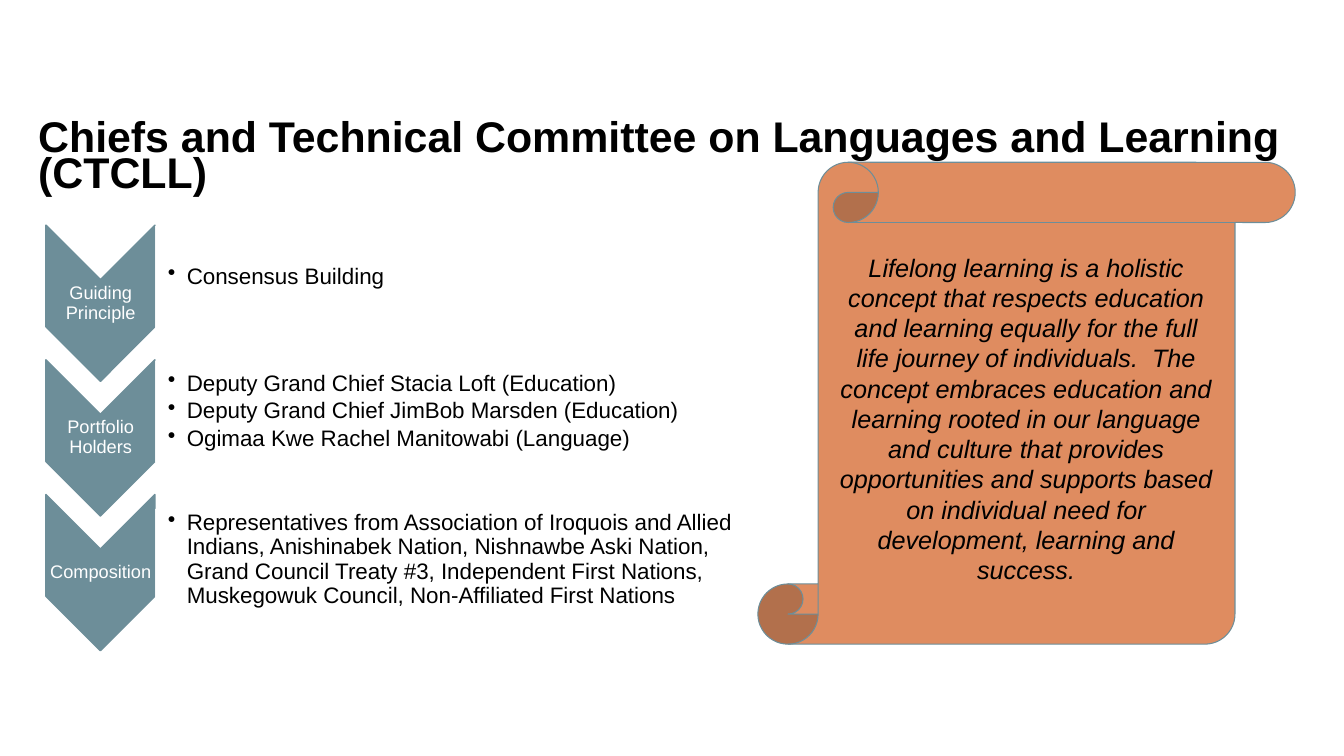
from dataclasses import dataclass

from lxml.etree import SubElement
from pptx import Presentation
from pptx.dml.color import RGBColor
from pptx.enum.shapes import MSO_SHAPE
from pptx.enum.text import MSO_ANCHOR, PP_ALIGN
from pptx.oxml.ns import qn
from pptx.shapes.autoshape import Shape
from pptx.slide import Slide
from pptx.util import Pt

SLATE, ORANGE, WHITE, BLACK = "6D8E99", "DF8C60", "FFFFFF", "000000"
ROW_PITCH = 96.2


@dataclass
class Box:
    left: float
    top: float
    width: float
    height: float

    def turned(self) -> "Box":
        """Return the frame that covers this box once rotated by 90 degrees."""
        shift = (self.width - self.height) / 2
        return Box(self.left + shift, self.top - shift, self.height, self.width)

    def lengths(self) -> tuple[Pt, ...]:
        return tuple(Pt(n) for n in (self.left, self.top, self.width, self.height))


@dataclass
class TextStyle:
    size: float
    color: str = BLACK
    bold: bool = False
    italic: bool = False
    align: PP_ALIGN = PP_ALIGN.LEFT
    anchor: MSO_ANCHOR = MSO_ANCHOR.TOP
    line_spacing: float = 1.0
    space_after: float = 0
    bulleted: bool = False
    insets: tuple[float, float, float, float] = (7.2, 3.6, 7.2, 3.6)


@dataclass
class Row:
    label: str
    items: list[str]
    body_top: float


TITLE = TextStyle(30.6, bold=True, line_spacing=0.7)
LABEL = TextStyle(13, WHITE, align=PP_ALIGN.CENTER, anchor=MSO_ANCHOR.MIDDLE,
                  line_spacing=0.9, insets=(0.65, 0.65, 0.65, 0.65))
BODY = TextStyle(16, anchor=MSO_ANCHOR.MIDDLE, line_spacing=0.9, space_after=2.4,
                 bulleted=True, insets=(9, 0.8, 0.8, 0.8))
QUOTE = TextStyle(18, italic=True, align=PP_ALIGN.CENTER)

ROWS = [
    Row("Guiding Principle", ["Consensus Building"], 165),
    Row("Portfolio Holders", [
        "Deputy Grand Chief Stacia Loft (Education)",
        "Deputy Grand Chief JimBob Marsden (Education)",
        "Ogimaa Kwe Rachel Manitowabi (Language)",
    ], 261.2),
    Row("Composition", [
        "Representatives from Association of Iroquois and Allied Indians, "
        "Anishinabek Nation, Nishnawbe Aski Nation, Grand Council Treaty #3, "
        "Independent First Nations, Muskegowuk Council, "
        "Non-Affiliated First Nations",
    ], 367),
]
QUOTE_TEXT = (
    "Lifelong learning is a holistic concept that respects education and "
    "learning equally for the full life journey of individuals.  The concept "
    "embraces education and learning rooted in our language and culture that "
    "provides opportunities and supports based on individual need for "
    "development, learning and success."
)


def rgb(color: str) -> RGBColor:
    return RGBColor.from_string(color)


def add_shape(slide: Slide, kind: MSO_SHAPE, box: Box, fill: str,
              line_width: float = 0) -> Shape:
    shape = slide.shapes.add_shape(kind, *box.lengths())
    shape.shadow.inherit = False
    shape.fill.solid()
    shape.fill.fore_color.rgb = rgb(fill)
    if line_width:
        shape.line.color.rgb = rgb(SLATE)
        shape.line.width = Pt(line_width)
    else:
        shape.line.fill.background()
    return shape


def add_text(slide: Slide, box: Box, texts: list[str], style: TextStyle) -> None:
    frame = slide.shapes.add_textbox(*box.lengths()).text_frame
    frame.word_wrap = True
    frame.vertical_anchor = style.anchor
    (frame.margin_left, frame.margin_top,
     frame.margin_right, frame.margin_bottom) = (Pt(n) for n in style.insets)
    for index, text in enumerate(texts):
        paragraph = frame.add_paragraph() if index else frame.paragraphs[0]
        paragraph.text = text
        paragraph.alignment = style.align
        paragraph.line_spacing = style.line_spacing
        paragraph.space_after = Pt(style.space_after)
        if style.bulleted:
            properties = paragraph._p.get_or_add_pPr()
            properties.set("marL", str(Pt(13.5)))
            properties.set("indent", str(-Pt(13.5)))
            SubElement(properties, qn("a:buChar")).set("char", "•")
        font = paragraph.font
        font.name = "Arial"
        font.size = Pt(style.size)
        font.bold = style.bold
        font.italic = style.italic
        font.color.rgb = rgb(style.color)


def add_row(slide: Slide, row: Row, offset: float) -> None:
    chevron = add_shape(slide, MSO_SHAPE.CHEVRON,
                        Box(32.8, 160.8 + offset, 77.8, 111.6).turned(), SLATE, 1)
    chevron.rotation = 90
    add_text(slide, Box(33, 200 + offset, 77.8, 33.2), [row.label], LABEL)

    panel = add_shape(slide, MSO_SHAPE.ROUND_2_SAME_RECTANGLE,
                      Box(110.9, row.body_top - 3.6, 441.4, 72.7).turned(), WHITE)
    panel.rotation = 90
    color = panel.fill._xPr.find(qn("a:solidFill"))[0]
    SubElement(color, qn("a:alpha")).set("val", "90000")
    add_text(slide, Box(110.9, row.body_top, 437.8, 65.5), row.items, BODY)


def main() -> None:
    presentation = Presentation()
    presentation.slide_width, presentation.slide_height = Pt(960), Pt(540)
    slide = presentation.slides.add_slide(presentation.slide_layouts[6])

    for index, row in enumerate(ROWS):
        add_row(slide, row, index * ROW_PITCH)
    add_text(slide, Box(20.2, 85, 914.4, 61.2),
             ["Chiefs and Technical Committee on Languages and Learning (CTCLL)"], TITLE)
    add_shape(slide, MSO_SHAPE.VERTICAL_SCROLL, Box(541.4, 115.9, 383.8, 344.2),
              ORANGE, 0.75)
    add_text(slide, Box(590.4, 176.4, 285.1, 247), [QUOTE_TEXT], QUOTE)
    presentation.save("out.pptx")


if __name__ == "__main__":
    main()
